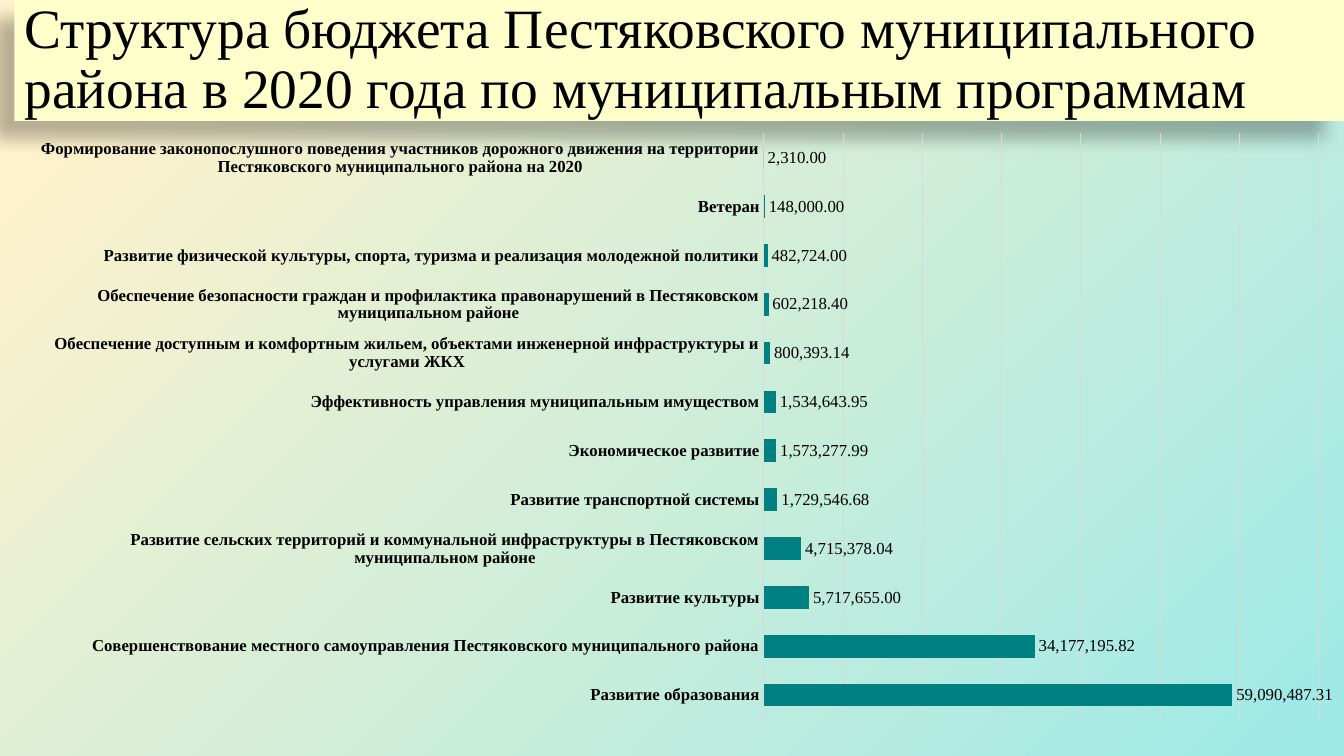
from lxml import etree
from pptx import Presentation
from pptx.chart.data import CategoryChartData
from pptx.dml.color import RGBColor
from pptx.enum.chart import XL_CHART_TYPE, XL_LABEL_POSITION, XL_TICK_MARK
from pptx.enum.text import MSO_ANCHOR, MSO_AUTO_SIZE, PP_ALIGN
from pptx.oxml import parse_xml
from pptx.oxml.ns import nsdecls, qn
from pptx.util import Cm, Pt

BAR_CLUSTERED = XL_CHART_TYPE.BAR_CLUSTERED
OUTSIDE_END = XL_LABEL_POSITION.OUTSIDE_END
NO_TICK = XL_TICK_MARK.NONE
MIDDLE = MSO_ANCHOR.MIDDLE
NO_AUTOFIT = MSO_AUTO_SIZE.NONE
LEFT = PP_ALIGN.LEFT

BLACK = RGBColor(0x00, 0x00, 0x00)
CREAM = RGBColor(0xFF, 0xFF, 0xCC)
TEAL = RGBColor(0x00, 0x80, 0x80)
GREY = RGBColor(0xD9, 0xD9, 0xD9)
AQUA = RGBColor(0x9D, 0xE9, 0xE7)
SAND = RGBColor(0xFF, 0xF2, 0xCC)

SERIF = "Times New Roman"
SANS = "Calibri"
MONEY = "#,##0.00"

TITLE = "Структура бюджета Пестяковского муниципального района в 2020 года по муниципальным программам"
PROGRAMMES = [
    ("Развитие образования", 59090487.31),
    ("Совершенствование местного самоуправления Пестяковского муниципального района", 34177195.82),
    ("Развитие культуры", 5717655),
    ("Развитие сельских территорий и коммунальной инфраструктуры в Пестяковском муниципальном районе", 4715378.04),
    ("Развитие транспортной системы", 1729546.68),
    ("Экономическое развитие", 1573277.99),
    ("Эффективность управления муниципальным имуществом", 1534643.95),
    ("Обеспечение доступным и комфортным жильем, объектами инженерной инфраструктуры и услугами ЖКХ", 800393.14),
    ("Обеспечение безопасности граждан и профилактика правонарушений в Пестяковском муниципальном районе", 602218.4),
    ("Развитие физической культуры, спорта, туризма и реализация молодежной политики", 482724),
    ("Ветеран", 148000),
    ("Формирование законопослушного поведения участников дорожного движения на территории "
     "Пестяковского муниципального района на 2020", 2310),
]


def set_font(font, name, size, color=BLACK, bold=False):
    font.name = name
    font.size = Pt(size)
    font.bold = bold
    font.color.rgb = color


def set_line(line, color, width):
    line.color.rgb = color
    line.width = Pt(width)


def paint_background(slide):
    """Radial gradient that spreads from the bottom right corner."""
    slide.element.cSld.insert(0, parse_xml(
        f'<p:bg {nsdecls("p", "a")}><p:bgPr><a:gradFill rotWithShape="1"><a:gsLst>'
        f'<a:gs pos="0"><a:srgbClr val="{AQUA}"/></a:gs>'
        f'<a:gs pos="93000"><a:srgbClr val="{SAND}"/></a:gs></a:gsLst>'
        '<a:path path="circle"><a:fillToRect l="100000" t="100000"/></a:path>'
        '</a:gradFill><a:effectLst/></p:bgPr></p:bg>'))


def add_shadow(shape, blur, distance, angle, opacity):
    shape.shadow.inherit = False
    effects = shape.element.spPr.find(qn("a:effectLst"))
    effects.append(parse_xml(
        f'<a:outerShdw {nsdecls("a")} blurRad="{Pt(blur)}" dist="{Pt(distance)}" '
        f'dir="{angle * 60000}" algn="tr" rotWithShape="0"><a:srgbClr val="{BLACK}">'
        f'<a:alpha val="{opacity * 1000}"/></a:srgbClr></a:outerShdw>'))


def fill_title(title):
    title.left, title.top, title.width, title.height = Cm(0.36), Cm(0), Cm(33.51), Cm(3.05)
    title.fill.solid()
    title.fill.fore_color.rgb = CREAM
    add_shadow(title, blur=11.8, distance=19.7, angle=141, opacity=28)
    frame = title.text_frame
    frame.text = TITLE
    frame.word_wrap = True
    frame.auto_size = NO_AUTOFIT
    frame.vertical_anchor = MIDDLE
    para = frame.paragraphs[0]
    para.alignment = LEFT
    para.line_spacing = 0.9
    set_font(para.font, SERIF, 39.6)


def place_plot(chart, **fractions):
    """Fix the inner plot area as fractions of the chart."""
    plot_area = chart.element.chart.plotArea
    for old in plot_area.findall(qn("c:layout")):
        plot_area.remove(old)
    layout = parse_xml(f'<c:layout {nsdecls("c")}><c:manualLayout/></c:layout>')
    settings = {"layoutTarget": "inner", "xMode": "edge", "yMode": "edge", **fractions}
    for name, value in settings.items():
        etree.SubElement(layout[0], qn(f"c:{name}")).set("val", str(value))
    plot_area.insert(0, layout)


def format_axes(chart):
    programmes = chart.category_axis
    programmes.major_tick_mark = NO_TICK
    programmes.minor_tick_mark = NO_TICK
    set_line(programmes.format.line, GREY, 1)
    set_font(programmes.tick_labels.font, SERIF, 12, bold=True)

    amounts = chart.value_axis
    amounts.visible = False
    amounts.minimum_scale = 0
    amounts.maximum_scale = 70_000_000
    amounts.major_unit = 10_000_000
    amounts.has_major_gridlines = True
    set_line(amounts.major_gridlines.format.line, GREY, 0.75)
    amounts.tick_labels.number_format = MONEY
    amounts.tick_labels.number_format_is_linked = False


def format_bars(plot):
    plot.gap_width = 115
    plot.overlap = -20
    plot.vary_by_categories = False
    bars = plot.series[0]
    bars.format.fill.solid()
    bars.format.fill.fore_color.rgb = TEAL
    labels = bars.data_labels
    labels.show_value = True
    labels.position = OUTSIDE_END
    labels.number_format = MONEY
    labels.number_format_is_linked = False
    set_font(labels.font, SERIF, 12)


def add_budget_chart(slide):
    names, amounts = zip(*PROGRAMMES)
    data = CategoryChartData(number_format=MONEY)
    data.categories = names
    data.add_series("Series 1", amounts)
    chart = slide.shapes.add_chart(
        BAR_CLUSTERED, Cm(0.36), Cm(3.05), Cm(33.55), Cm(15.39), data).chart
    chart.has_legend = False
    chart.has_title = False
    set_font(chart.font, SANS, 10)
    format_axes(chart)
    format_bars(chart.plots[0])
    place_plot(chart, x=0.563, y=0.02, w=0.417, h=0.96)


def main():
    deck = Presentation()
    deck.slide_width, deck.slide_height = Cm(33.87), Cm(19.05)
    title_only = deck.slide_layouts[5]
    slide = deck.slides.add_slide(title_only)
    paint_background(slide)
    fill_title(slide.shapes.title)
    add_budget_chart(slide)
    deck.save("out.pptx")


if __name__ == "__main__":
    main()
